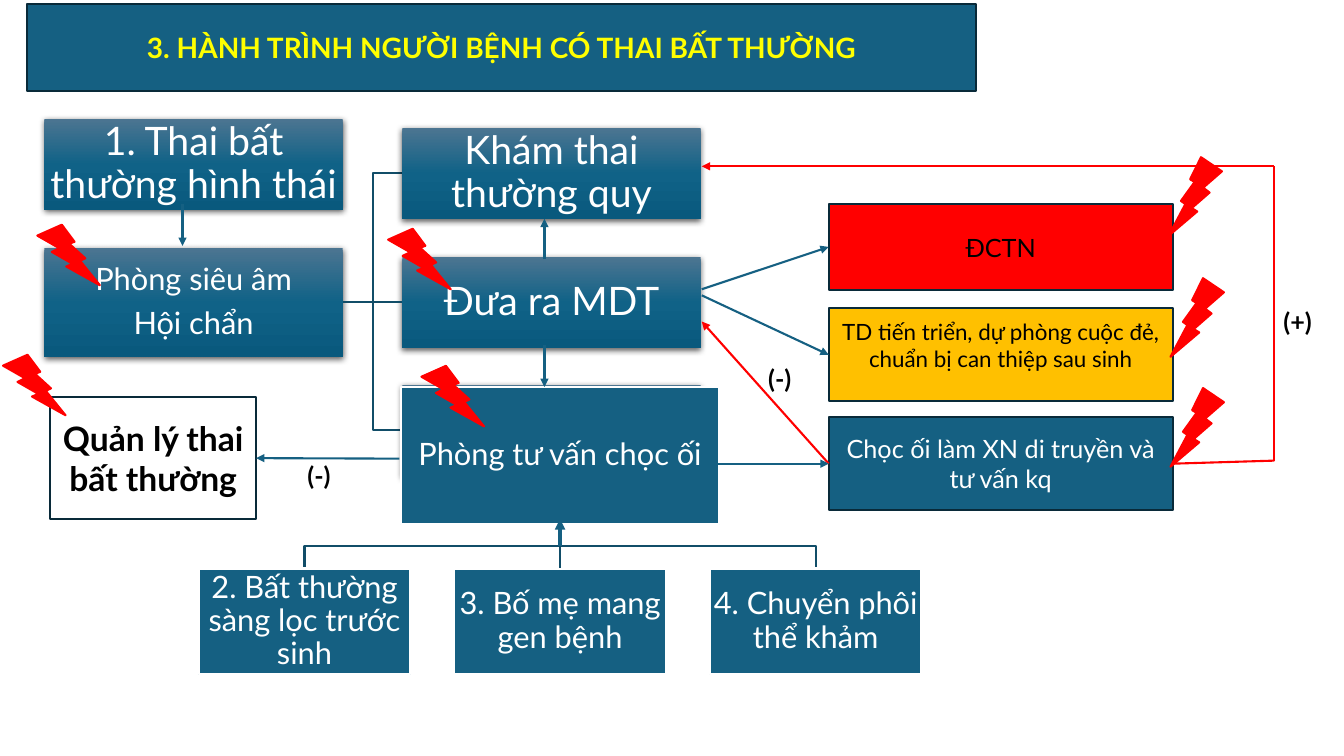
from copy import deepcopy

from lxml.etree import SubElement
from pptx import Presentation
from pptx.dml.color import RGBColor
from pptx.enum.shapes import MSO_CONNECTOR, MSO_SHAPE
from pptx.enum.text import MSO_ANCHOR, MSO_AUTO_SIZE, PP_ALIGN
from pptx.oxml.ns import qn
from pptx.util import Inches, Pt

FONT = "Lato"
TEAL = RGBColor(0x15, 0x60, 0x82)
BRANCH_TEAL = RGBColor(0x11, 0x4D, 0x68)
OUTLINE = RGBColor(0x09, 0x2A, 0x39)
RED = RGBColor(0xFF, 0x00, 0x00)
AMBER = RGBColor(0xFF, 0xC0, 0x00)
YELLOW = RGBColor(0xFF, 0xFF, 0x00)
WHITE = RGBColor(0xFF, 0xFF, 0xFF)
BLACK = RGBColor(0x00, 0x00, 0x00)
GRADIENT = [
    (0, RGBColor(0x4C, 0x75, 0x91)),
    (0.5, RGBColor(0x10, 0x62, 0x87)),
    (1, RGBColor(0x09, 0x59, 0x7D)),
]
TOP, LEFT, BOTTOM, RIGHT = range(4)


def inches(*lengths):
    """Turn plain numbers into lengths."""
    return [Inches(length) for length in lengths]


def write_text(shape, text, size, color, bold=False, tight=False):
    """Write centred paragraphs, with small margins and line pitch if tight."""
    frame = shape.text_frame
    frame.word_wrap = True
    frame.vertical_anchor = MSO_ANCHOR.MIDDLE
    frame.text = text
    if tight:
        frame.margin_left = frame.margin_right = Inches(0.02)
        frame.margin_top = frame.margin_bottom = Inches(0.02)
    for paragraph in frame.paragraphs:
        paragraph.alignment = PP_ALIGN.CENTER
        paragraph.font.name = FONT
        paragraph.font.size = Pt(size)
        paragraph.font.bold = bold
        paragraph.font.color.rgb = color
        if tight:
            paragraph.line_spacing = 0.9
            paragraph.space_after = Pt(size * 0.35)


def paint(shape, fill, line):
    """Give a shape a solid fill and a thin outline."""
    shape.fill.solid()
    shape.fill.fore_color.rgb = fill
    shape.line.color.rgb = line
    shape.line.width = Pt(1.5)


def add_shape(slide, box, fill, line, kind=MSO_SHAPE.RECTANGLE):
    """Add a flat shape without shadow."""
    shape = slide.shapes.add_shape(kind, *inches(*box))
    shape.shadow.inherit = False
    paint(shape, fill, line)
    return shape


def add_gradient_box(slide, box, text="", size=28):
    """Add a shaded box with a soft shadow below it."""
    shape = slide.shapes.add_shape(MSO_SHAPE.RECTANGLE, *inches(*box))
    shape.line.fill.background()
    shape.fill.gradient()
    shape.fill.gradient_angle = 270
    stops = shape.element.spPr.find(".//" + qn("a:gsLst"))
    stops.append(deepcopy(stops[0]))
    for stop, (position, color) in zip(shape.fill.gradient_stops, GRADIENT):
        stop.position = position
        stop.color.rgb = color
    shape.shadow.inherit = False
    effects = shape.element.spPr.find(qn("a:effectLst"))
    shadow = SubElement(effects, qn("a:outerShdw"), blurRad=str(Pt(4.5)),
                        dist=str(Pt(1.5)), dir="5400000", rotWithShape="0")
    shade = SubElement(shadow, qn("a:srgbClr"), val=str(BLACK))
    SubElement(shade, qn("a:alpha"), val="63000")
    if text:
        write_text(shape, text, size, WHITE, tight=True)
    return shape


def add_bracket(slide, points):
    """Draw an open branch line through the points."""
    start, *rest = [tuple(inches(*point)) for point in points]
    builder = slide.shapes.build_freeform(*start, scale=1.0)
    builder.add_line_segments(rest, close=False)
    shape = builder.convert_to_shape()
    shape.shadow.inherit = False
    shape.fill.background()
    shape.line.color.rgb = BRANCH_TEAL
    shape.line.width = Pt(1.5)


def add_line(slide, start, end, color=TEAL, arrow=True, width=1.5):
    """Join two ends, each a point or a shape with its side."""
    glued = [not isinstance(place[0], (int, float)) for place in (start, end)]
    points = [(0, 0) if joined else place for joined, place in zip(glued, (start, end))]
    line = slide.shapes.add_connector(MSO_CONNECTOR.STRAIGHT, *inches(*points[0], *points[1]))
    if glued[0]:
        line.begin_connect(*start)
    if glued[1]:
        line.end_connect(*end)
    line.line.color.rgb = color
    line.line.width = Pt(width)
    if arrow:
        SubElement(line.line._get_or_add_ln(), qn("a:tailEnd"), type="triangle")
    SubElement(line.element.spPr, qn("a:effectLst"))


def add_title(slide, box):
    """Format the title placeholder as a banner."""
    title = slide.shapes.title
    title.left, title.top, title.width, title.height = inches(*box)
    paint(title, TEAL, OUTLINE)
    write_text(title, "3. HÀNH TRÌNH NGƯỜI BỆNH CÓ THAI BẤT THƯỜNG", 20, YELLOW, bold=True)
    title.text_frame.auto_size = MSO_AUTO_SIZE.NONE


def add_examination(slide, left, top):
    """Build the ultrasound column and the consultation column it branches to."""
    width, height = 2.96, 0.9
    column = left + 3.55
    spine, middle = left + 3.26, top + 1.82
    for branch in (top + 0.54, top + 3.09):
        add_bracket(slide, [(left + width, middle), (spine, middle),
                            (spine, branch), (column, branch)])
    add_gradient_box(slide, (left, top, width, height), "1. Thai bất thường hình thái")
    ultrasound = add_gradient_box(slide, (left, top + 1.28, width, 1.08),
                                  "Phòng siêu âm\nHội chẩn", 22)
    add_gradient_box(slide, (column, top + 0.09, width, height), "Khám thai thường quy")
    meeting = add_gradient_box(slide, (column, top + 1.37, width, height), "Đưa ra MDT")
    add_gradient_box(slide, (column, top + 2.64, width, height))
    add_line(slide, (ultrasound, RIGHT), (meeting, LEFT), BRANCH_TEAL, arrow=False)


def add_counselling(slide, left, top):
    """Build the counselling room above its three referral reasons."""
    reasons = ["2. Bất thường sàng lọc trước sinh", "3. Bố mẹ mang gen bệnh",
               "4. Chuyển phôi thể khảm"]
    width, pitch, row = 2.1, 2.535, top + 1.8
    middle, bottom, bus = left + pitch + width / 2, top + 1.36, top + 1.58
    for end in (middle - pitch, middle + pitch):
        add_bracket(slide, [(middle, bottom), (middle, bus), (end, bus), (end, row)])
    room = add_shape(slide, (middle - 1.58, top, 3.16, 1.36), TEAL, WHITE)
    write_text(room, "Phòng tư vấn chọc ối", 22, WHITE, tight=True)
    boxes = []
    for index, reason in enumerate(reasons):
        box = add_shape(slide, (left + index * pitch, row, width, 1.05), TEAL, WHITE)
        write_text(box, reason, 22, WHITE, tight=True)
        boxes.append(box)
    add_line(slide, (room, BOTTOM), (boxes[1], TOP), BRANCH_TEAL, arrow=False)
    add_line(slide, (middle, bus), (middle, top + 1.31), width=2.5)


def add_outcomes(slide, left, top):
    """Stack the three outcome boxes and return them."""
    outcomes = [
        (0, 0.86, "ĐCTN", 18, RED, BLACK),
        (1.04, 0.92, "TD tiến triển, dự phòng cuộc đẻ, chuẩn bị can thiệp sau sinh", 16, AMBER, BLACK),
        (2.12, 0.92, "Chọc ối làm XN di truyền và tư vấn kq", 18, TEAL, WHITE),
    ]
    boxes = []
    for offset, height, text, size, fill, color in outcomes:
        box = add_shape(slide, (left, top + offset, 3.41, height), fill, OUTLINE)
        write_text(box, text, size, color)
        boxes.append(box)
    boxes[1].text_frame.margin_bottom = Inches(0.25)
    return boxes


def add_flow(slide, outcomes, management):
    """Draw the arrows and their result signs."""
    termination, monitoring, sampling = outcomes
    corner, turn = (12.64, 1.65), (12.64, 4.57)
    add_line(slide, (6.96, 2.87), (termination, LEFT))
    add_line(slide, (6.96, 2.93), (monitoring, LEFT))
    add_line(slide, (sampling, LEFT), (6.96, 3.19), RED)
    add_line(slide, (sampling, RIGHT), turn, RED, arrow=False)
    add_line(slide, corner, turn, RED, arrow=False)
    add_line(slide, corner, (6.96, 1.65), RED)
    add_line(slide, (7.1, 4.6), (sampling, LEFT))
    add_line(slide, (5.4, 2.57), (5.4, 2.17))
    add_line(slide, (5.4, 3.42), (5.4, 3.84))
    add_line(slide, (3.96, 4.55), (management, RIGHT))
    add_line(slide, (1.81, 2.02), (1.81, 2.44))
    for left, top, sign in [(7.52, 3.55, "(-)"), (12.63, 2.99, "(+)"), (2.95, 4.52, "(-)")]:
        label = slide.shapes.add_textbox(*inches(left, top, 0.49, 0.4))
        write_text(label, sign, 18, BLACK, bold=True)
        label.text_frame.word_wrap = False
        label.text_frame.paragraphs[0].alignment = PP_ALIGN.LEFT


def add_bolts(slide):
    """Mark the critical steps with lightning bolts."""
    for left, top in [(0.37, 2.23), (4.18, 3.63), (3.85, 2.27), (0.03, 3.52)]:
        add_shape(slide, (left, top, 0.62, 0.6), RED, RED, MSO_SHAPE.LIGHTNING_BOLT)
    for left, top in [(11.61, 3.85), (11.61, 2.76), (11.59, 1.56)]:
        bolt = add_shape(slide, (left, top, 0.53, 0.78), RED, RED, MSO_SHAPE.LIGHTNING_BOLT)
        bolt.element.spPr.find(qn("a:xfrm")).set("flipH", "1")


def main():
    """Build and save the patient journey slide."""
    presentation = Presentation()
    presentation.slide_width, presentation.slide_height = inches(13.33, 7.5)
    slide = presentation.slides.add_slide(presentation.slide_layouts[5])
    add_title(slide, (0.27, 0.04, 9.41, 0.86))
    add_examination(slide, 0.44, 1.18)
    add_counselling(slide, 1.97, 3.84)
    outcomes = add_outcomes(slide, 8.22, 2.02)
    management = add_shape(slide, (0.5, 3.94, 2.04, 1.21), WHITE, OUTLINE)
    write_text(management, "Quản lý thai bất thường", 24, BLACK, bold=True)
    add_flow(slide, outcomes, management)
    add_bolts(slide)
    presentation.save("out.pptx")


if __name__ == "__main__":
    main()
